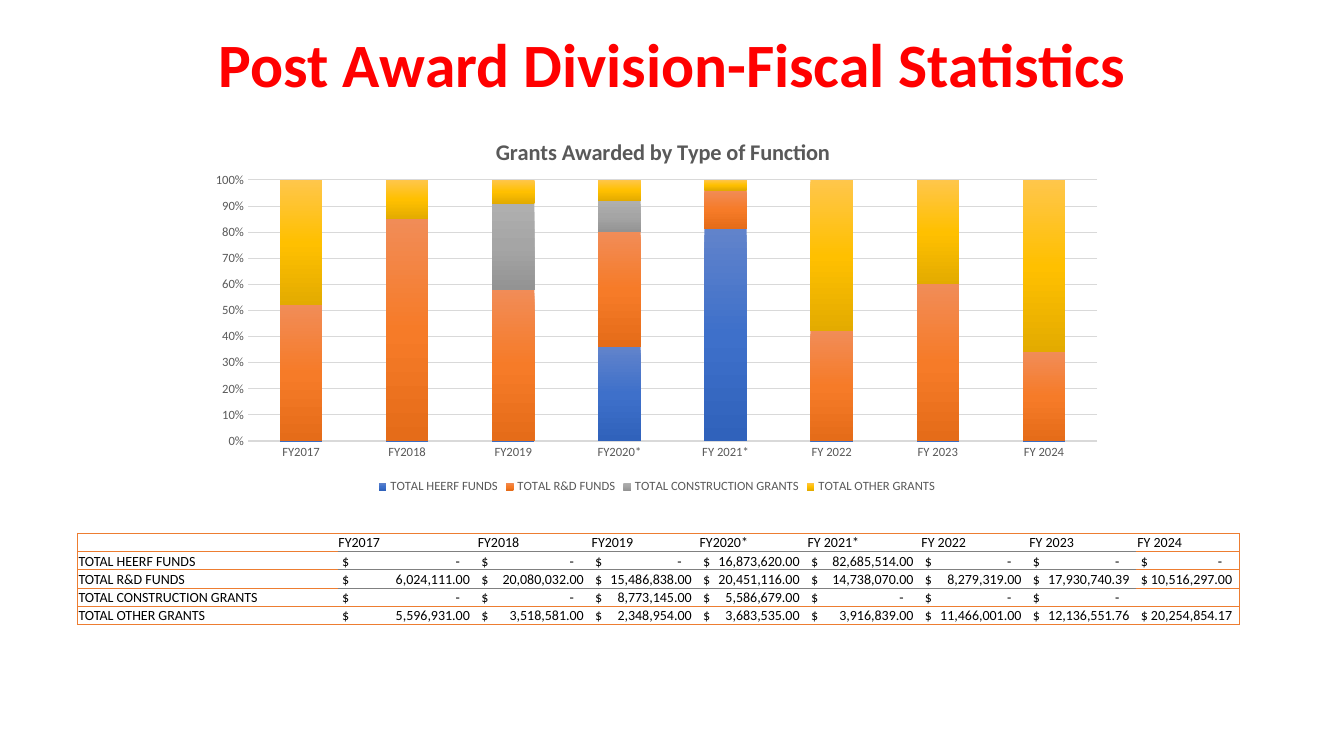
"""Build the Post Award Division fiscal statistics slide."""
from dataclasses import dataclass
from typing import Optional

from lxml.etree import SubElement
from pptx import Presentation
from pptx.chart.data import CategoryChartData
from pptx.dml.color import RGBColor
from pptx.enum.chart import XL_CHART_TYPE, XL_LEGEND_POSITION, XL_TICK_MARK
from pptx.enum.text import MSO_ANCHOR, PP_ALIGN
from pptx.oxml.ns import qn
from pptx.util import Cm, Pt

FONT = "Calibri"
RED = RGBColor(0xFF, 0x00, 0x00)
BLACK = RGBColor(0x00, 0x00, 0x00)
WHITE = RGBColor(0xFF, 0xFF, 0xFF)
ORANGE = RGBColor(0xED, 0x7D, 0x31)
RULE_GRAY = RGBColor(0x80, 0x80, 0x80)
TEXT_GRAY = RGBColor(0x59, 0x59, 0x59)
GRID_GRAY = RGBColor(0xD9, 0xD9, 0xD9)
NO_STYLE = "{2D5ABB26-0587-4C30-8999-92F81FD0307C}"

YEARS = ["FY2017", "FY2018", "FY2019", "FY2020*", "FY 2021*", "FY 2022", "FY 2023", "FY 2024"]
COLUMN_CM = [6.55, 3.51, 2.87, 2.72, 2.72, 2.87, 2.72, 2.72, 2.59]
ROW_CM = 0.46


@dataclass
class Fund:
    name: str
    shares: list[Optional[int]]
    amounts: list[str]
    gradient: list[RGBColor]


FUNDS = [
    Fund("TOTAL HEERF FUNDS", [0, 0, 0, 36, 82, 0, 0, 0],
         ["-", "-", "-", "16,873,620.00", "82,685,514.00", "-", "-", "-"],
         [RGBColor(0x61, 0x83, 0xCB), RGBColor(0x3E, 0x70, 0xCA), RGBColor(0x30, 0x62, 0xBB)]),
    Fund("TOTAL R&D FUNDS", [52, 85, 58, 44, 15, 42, 60, 34],
         ["6,024,111.00", "20,080,032.00", "15,486,838.00", "20,451,116.00",
          "14,738,070.00", "8,279,319.00", "17,930,740.39", "10,516,297.00"],
         [RGBColor(0xF1, 0x8C, 0x57), RGBColor(0xF6, 0x7B, 0x28), RGBColor(0xE5, 0x6C, 0x19)]),
    Fund("TOTAL CONSTRUCTION GRANTS", [0, 0, 33, 12, 0, 0, 0, None],
         ["-", "-", "8,773,145.00", "5,586,679.00", "-", "-", "-", ""],
         [RGBColor(0xAF, 0xAF, 0xAF), RGBColor(0xA5, 0xA5, 0xA5), RGBColor(0x93, 0x93, 0x93)]),
    Fund("TOTAL OTHER GRANTS", [48, 15, 9, 8, 4, 58, 40, 66],
         ["5,596,931.00", "3,518,581.00", "2,348,954.00", "3,683,535.00",
          "3,916,839.00", "11,466,001.00", "12,136,551.76", "20,254,854.17"],
         [RGBColor(0xFF, 0xC6, 0x4B), RGBColor(0xFF, 0xC0, 0x00), RGBColor(0xE3, 0xAB, 0x00)]),
]


def style_font(font, size: float, color: RGBColor, bold: bool = False) -> None:
    font.name, font.size, font.bold = FONT, Pt(size), bold
    font.color.rgb = color


def add_title(s) -> None:
    tf = s.shapes.add_textbox(Cm(2.34), Cm(0.56), Cm(29.21), Cm(2.31)).text_frame
    tf.word_wrap = True
    tf.vertical_anchor = MSO_ANCHOR.MIDDLE
    p = tf.paragraphs[0]
    p.alignment, p.line_spacing = PP_ALIGN.CENTER, 0.9
    r = p.add_run()
    r.text = "Post Award Division-Fiscal Statistics"
    style_font(r.font, 44, RED, True)


def set_gradient(series, colors: list[RGBColor]) -> None:
    grad = SubElement(series._element.get_or_add_spPr(), qn("a:gradFill"), rotWithShape="1")
    stops = SubElement(grad, qn("a:gsLst"))
    for i, color in enumerate(colors):
        stop = SubElement(stops, qn("a:gs"), pos=str(i * 50000))
        SubElement(stop, qn("a:srgbClr"), val=str(color))
    SubElement(grad, qn("a:lin"), ang="5400000", scaled="0")


def set_layout(element, index: int, inner: bool, **fractions: float) -> None:
    for old in element.findall(qn("c:layout")):
        element.remove(old)
    layout = SubElement(element, qn("c:layout"))
    element.insert(index, layout)
    manual = SubElement(layout, qn("c:manualLayout"))
    if inner:
        SubElement(manual, qn("c:layoutTarget"), val="inner")
    for key in ("x", "y"):
        SubElement(manual, qn(f"c:{key}Mode"), val="edge")
    for key, value in fractions.items():
        SubElement(manual, qn(f"c:{key}"), val=str(value))


def add_grants_chart(s) -> None:
    data = CategoryChartData()
    data.categories = YEARS
    for fund in FUNDS:
        data.add_series(fund.name, fund.shares)
    chart = s.shapes.add_chart(XL_CHART_TYPE.COLUMN_STACKED_100, Cm(5), Cm(2.87),
                               Cm(23.11), Cm(9.68), data).chart
    style_font(chart.font, 10, BLACK)
    chart.has_title = True
    r = chart.chart_title.text_frame.paragraphs[0].add_run()
    r.text = "Grants Awarded by Type of Function"
    style_font(r.font, 16, TEXT_GRAY, True)
    set_layout(chart.chart_title._element, 1, False, x=0.32, y=0.05)
    chart.has_legend = True
    chart.legend.position = XL_LEGEND_POSITION.BOTTOM
    chart.legend.include_in_layout = False
    style_font(chart.legend.font, 9, TEXT_GRAY)

    for axis in (chart.category_axis, chart.value_axis):
        axis.major_tick_mark = axis.minor_tick_mark = XL_TICK_MARK.NONE
        style_font(axis.tick_labels.font, 9, TEXT_GRAY)
    chart.category_axis.format.line.color.rgb = GRID_GRAY
    chart.category_axis.format.line.width = Pt(1)
    values = chart.value_axis
    values.format.line.fill.background()
    values.tick_labels.number_format = "0%"
    values.tick_labels.number_format_is_linked = False
    values.major_gridlines.format.line.color.rgb = GRID_GRAY
    values.major_gridlines.format.line.width = Pt(0.75)

    plot = chart.plots[0]
    plot.gap_width, plot.overlap, plot.vary_by_categories = 150, 100, False
    for series, fund in zip(plot.series, FUNDS):
        set_gradient(series, fund.gradient)
    set_layout(plot._element.getparent(), 0, True, x=0.054, y=0.172, w=0.926, h=0.68)


def set_borders(cell, borders: dict[str, RGBColor]) -> None:
    tcPr = cell._tc.get_or_add_tcPr()
    for i, (side, color) in enumerate(borders.items()):
        line = SubElement(tcPr, qn(f"a:ln{side}"), w=str(Pt(1)))
        tcPr.insert(i, line)
        fill = SubElement(line, qn("a:solidFill"))
        SubElement(fill, qn("a:srgbClr"), val=str(color))


def fill_cell(cell, text: str, width: float, is_amount: bool) -> None:
    cell.fill.solid()
    cell.fill.fore_color.rgb = WHITE
    cell.vertical_anchor = MSO_ANCHOR.BOTTOM
    cell.margin_left = Cm(0.11 if is_amount else 0.02)
    cell.margin_right = cell.margin_top = Cm(0.02)
    cell.margin_bottom = 0
    p = cell.text_frame.paragraphs[0]
    if not text:
        SubElement(p._p, qn("a:endParaRPr"), sz="1000")
        return
    if is_amount:
        stop = width - (0.54 if text == "-" else 0.29)
        tabs = SubElement(p._p.get_or_add_pPr(), qn("a:tabLst"))
        SubElement(tabs, qn("a:tab"), pos=str(Cm(stop)), algn="r")
        text = f"$\t{text}"
    r = p.add_run()
    r.text = text
    style_font(r.font, 10, BLACK)


def add_amount_table(s) -> None:
    rows = [["", *YEARS]] + [[fund.name, *fund.amounts] for fund in FUNDS]
    table = s.shapes.add_table(len(rows), len(COLUMN_CM), Cm(1.96), Cm(13.44),
                               Cm(sum(COLUMN_CM)), Cm(ROW_CM * len(rows))).table
    table.first_row = table.horz_banding = False
    table._tbl.tblPr.find(qn("a:tableStyleId")).text = NO_STYLE
    for column, width in zip(table.columns, COLUMN_CM):
        column.width = Cm(width)
    last_row, last_col = len(rows) - 1, len(COLUMN_CM) - 1
    for i, texts in enumerate(rows):
        table.rows[i].height = Cm(ROW_CM)
        for j, text in enumerate(texts):
            cell = table.cell(i, j)
            fill_cell(cell, text, COLUMN_CM[j], i > 0 and j > 0)
            at_end = j in (0, last_col)
            borders = {}
            if at_end:
                borders["L" if j == 0 else "R"] = ORANGE
            borders["T"] = ORANGE if at_end or i in (0, last_row) else RULE_GRAY
            borders["B"] = ORANGE if at_end or i >= last_row - 1 else RULE_GRAY
            set_borders(cell, borders)


def main() -> None:
    prs = Presentation()
    prs.slide_width, prs.slide_height = Cm(33.87), Cm(19.05)
    s = prs.slides.add_slide(prs.slide_layouts[6])
    add_title(s)
    add_grants_chart(s)
    add_amount_table(s)
    prs.save("out.pptx")


if __name__ == "__main__":
    main()
